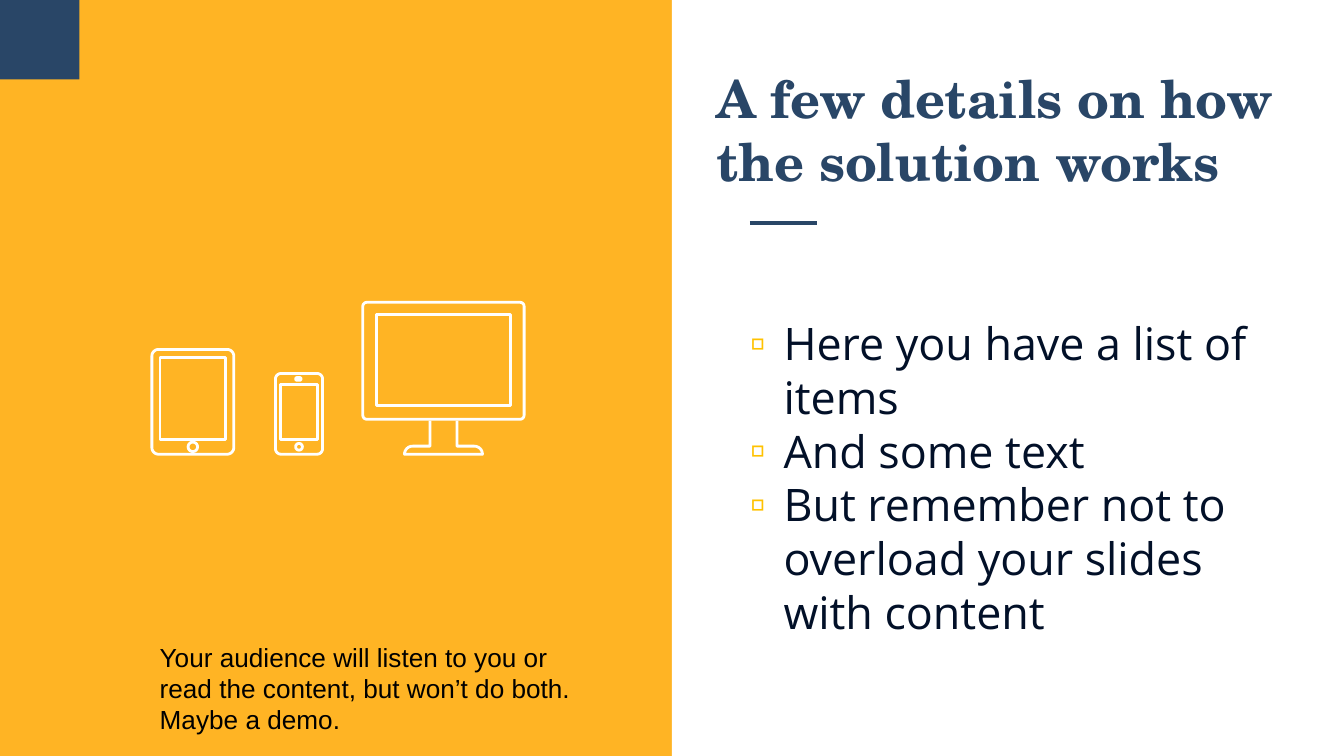
import math
from dataclasses import dataclass

import pptx
import pptx.dml.color
import pptx.enum.shapes
import pptx.enum.text
import pptx.oxml
import pptx.oxml.ns
import pptx.util
from lxml import etree
from pptx.util import Inches


@dataclass(frozen=True)
class Theme:
    navy: str = "294667"
    amber: str = "FFA800"
    bullet: str = "FFC200"
    ink: str = "021028"
    white: str = "FFFFFF"
    black: str = "000000"
    title_font: str = "TeX Gyre Schola"
    body_font: str = "Open Sans"
    caption_font: str = "Arial"
    title_size: int = 28
    body_size: int = 24
    caption_size: int = 14
    rule_width: float = 2.25
    icon_width: float = 1.5


THEME = Theme()
SLIDE_WIDTH = 10
SLIDE_HEIGHT = SLIDE_WIDTH * 9 / 16


def rgb(color):
    return pptx.dml.color.RGBColor.from_string(color)


def add_child(parent, tag, **attributes):
    return etree.SubElement(parent, pptx.oxml.ns.qn(tag), **attributes)


def style_font(paragraph, name, size, color, bold=False):
    font = paragraph.font
    font.name, font.size, font.bold = name, pptx.util.Pt(size), bold
    font.color.rgb = rgb(color)


def add_panel(slide, left, top, width, height, color, opacity=None):
    panel = slide.shapes.add_shape(
        pptx.enum.shapes.MSO_SHAPE.RECTANGLE,
        Inches(left), Inches(top), Inches(width), Inches(height))
    panel.shadow.inherit = False
    panel.fill.solid()
    panel.fill.fore_color.rgb = rgb(color)
    panel.line.fill.background()
    if opacity is not None:
        color_element = panel._element.spPr.find(".//" + pptx.oxml.ns.qn("a:srgbClr"))
        add_child(color_element, "a:alpha", val=str(opacity * 1000))


def add_rule(slide, left, right, y):
    rule = slide.shapes.add_connector(
        pptx.enum.shapes.MSO_CONNECTOR.STRAIGHT,
        Inches(left), Inches(y), Inches(right), Inches(y))
    rule.line.color.rgb = rgb(THEME.navy)
    rule.line.width = pptx.util.Pt(THEME.rule_width)
    add_child(rule._element.spPr, "a:effectLst")


def place_placeholder(placeholder, left, top, width, height, anchor):
    placeholder.left, placeholder.top = Inches(left), Inches(top)
    placeholder.width, placeholder.height = Inches(width), Inches(height)
    frame = placeholder.text_frame
    frame.margin_left = frame.margin_right = Inches(0.1)
    frame.margin_top = frame.margin_bottom = Inches(0.1)
    frame.word_wrap = True
    frame.auto_size = pptx.enum.text.MSO_AUTO_SIZE.NONE
    frame.vertical_anchor = anchor
    # Bring the text in front of the panels
    placeholder._element.getparent().append(placeholder._element)
    return frame


def fill_title(placeholder, text):
    frame = place_placeholder(placeholder, 5.23, 0.47, 4.51, 1.06,
                              pptx.enum.text.MSO_ANCHOR.BOTTOM)
    frame.text = text
    paragraph = frame.paragraphs[0]
    paragraph.alignment = pptx.enum.text.PP_ALIGN.LEFT
    style_font(paragraph, THEME.title_font, THEME.title_size, THEME.navy, True)


def fill_list(placeholder, items):
    frame = place_placeholder(placeholder, 5.23, 2.25, 4.51, 2.88,
                              pptx.enum.text.MSO_ANCHOR.TOP)
    frame.text = "\n".join(items)
    for paragraph in frame.paragraphs:
        paragraph.space_before = pptx.util.Pt(0)
        style_font(paragraph, THEME.body_font, THEME.body_size, THEME.ink)
        properties = paragraph._p.get_or_add_pPr()
        properties.set("marL", str(Inches(0.5)))
        properties.set("indent", str(Inches(-0.25)))
        bullet_color = pptx.oxml.parse_xml(
            f'<a:buClr {pptx.oxml.ns.nsdecls("a")}><a:srgbClr val="{THEME.bullet}"/></a:buClr>')
        bullet = pptx.oxml.parse_xml(
            f'<a:buChar {pptx.oxml.ns.nsdecls("a")} char="▫"/>')
        default_run = properties.find(pptx.oxml.ns.qn("a:defRPr"))
        default_run.addprevious(bullet_color)
        default_run.addprevious(bullet)


def add_caption(slide, text):
    box = slide.shapes.add_textbox(Inches(1.09), Inches(4.72), Inches(3.5), Inches(0.81))
    box.text_frame.word_wrap = True
    box.text_frame.text = text
    style_font(box.text_frame.paragraphs[0], THEME.caption_font,
               THEME.caption_size, THEME.black)


def arc(center_x, center_y, radius, start, end, steps=8):
    angles = [math.radians(start + (end - start) * i / steps) for i in range(steps + 1)]
    return [(center_x + radius * math.cos(a), center_y + radius * math.sin(a))
            for a in angles]


def rounded(left, top, right, bottom, radius=0):
    """Outline of a rectangle; a radius of half its side gives a circle or pill."""
    if not radius:
        return [(left, top), (right, top), (right, bottom), (left, bottom)]
    x1, x2 = left + radius, right - radius
    y1, y2 = top + radius, bottom - radius
    corners = [(x2, y1, -90), (x2, y2, 0), (x1, y2, 90), (x1, y1, 180)]
    return [point for x, y, start in corners
            for point in arc(x, y, radius, start, start + 90)]


def add_outline(group, contours, close=True):
    contours = [[(Inches(x), Inches(y)) for x, y in contour] for contour in contours]
    builder = group.shapes.build_freeform(*contours[0][0])
    for index, contour in enumerate(contours):
        if index:
            builder.move_to(*contour[0])
        builder.add_line_segments(contour[1:], close=close)
    outline = builder.convert_to_shape()
    outline.shadow.inherit = False
    outline.fill.background()
    outline.line.color.rgb = rgb(THEME.white)
    outline.line.width = pptx.util.Pt(THEME.icon_width)


def add_devices(slide):
    devices = slide.shapes.add_group_shape()
    # Tablet: body, home button, screen
    add_outline(devices, [rounded(1.13, 2.6, 1.74, 3.38, 0.05),
                          rounded(1.4, 3.29, 1.47, 3.36, 0.035),
                          rounded(1.19, 2.66, 1.68, 3.27)])
    # Phone: body, speaker, home button, screen
    add_outline(devices, [rounded(2.05, 2.78, 2.4, 3.38, 0.04),
                          rounded(2.2, 2.81, 2.24, 2.83, 0.01),
                          rounded(2.2, 3.3, 2.25, 3.35, 0.025),
                          rounded(2.09, 2.86, 2.36, 3.27)])
    # Monitor: stand, then case and screen
    stand = ([(3.2, 3.13), (3.2, 3.32)] + arc(3.07, 3.38, 0.06, 270, 180)
             + arc(3.53, 3.38, 0.06, 0, -90) + [(3.4, 3.32), (3.4, 3.13)])
    add_outline(devices, [stand], close=False)
    add_outline(devices, [rounded(2.7, 2.25, 3.9, 3.12, 0.03),
                          rounded(2.8, 2.34, 3.8, 3.02)])


def main():
    presentation = pptx.Presentation()
    presentation.slide_width = Inches(SLIDE_WIDTH)
    presentation.slide_height = Inches(SLIDE_HEIGHT)
    slide = presentation.slides.add_slide(presentation.slide_layouts[1])

    # Background halves, title rule and corner square
    half = SLIDE_WIDTH / 2
    add_panel(slide, 0, 0, half, SLIDE_HEIGHT, THEME.amber, opacity=86)
    add_panel(slide, half, 0, half, SLIDE_HEIGHT, THEME.white)
    add_rule(slide, 5.58, 6.08, 1.66)
    add_panel(slide, 0, 0, 0.59, 0.59, THEME.navy)

    # Title and list
    fill_title(slide.shapes.title, "A few details on how the solution works")
    fill_list(slide.placeholders[1], [
        "Here you have a list of items",
        "And some text",
        "But remember not to overload your slides with content",
    ])

    # Device icons and caption
    add_devices(slide)
    add_caption(slide, "Your audience will listen to you or read the content, "
                       "but won’t do both. Maybe a demo.")
    presentation.save("out.pptx")


if __name__ == "__main__":
    main()
